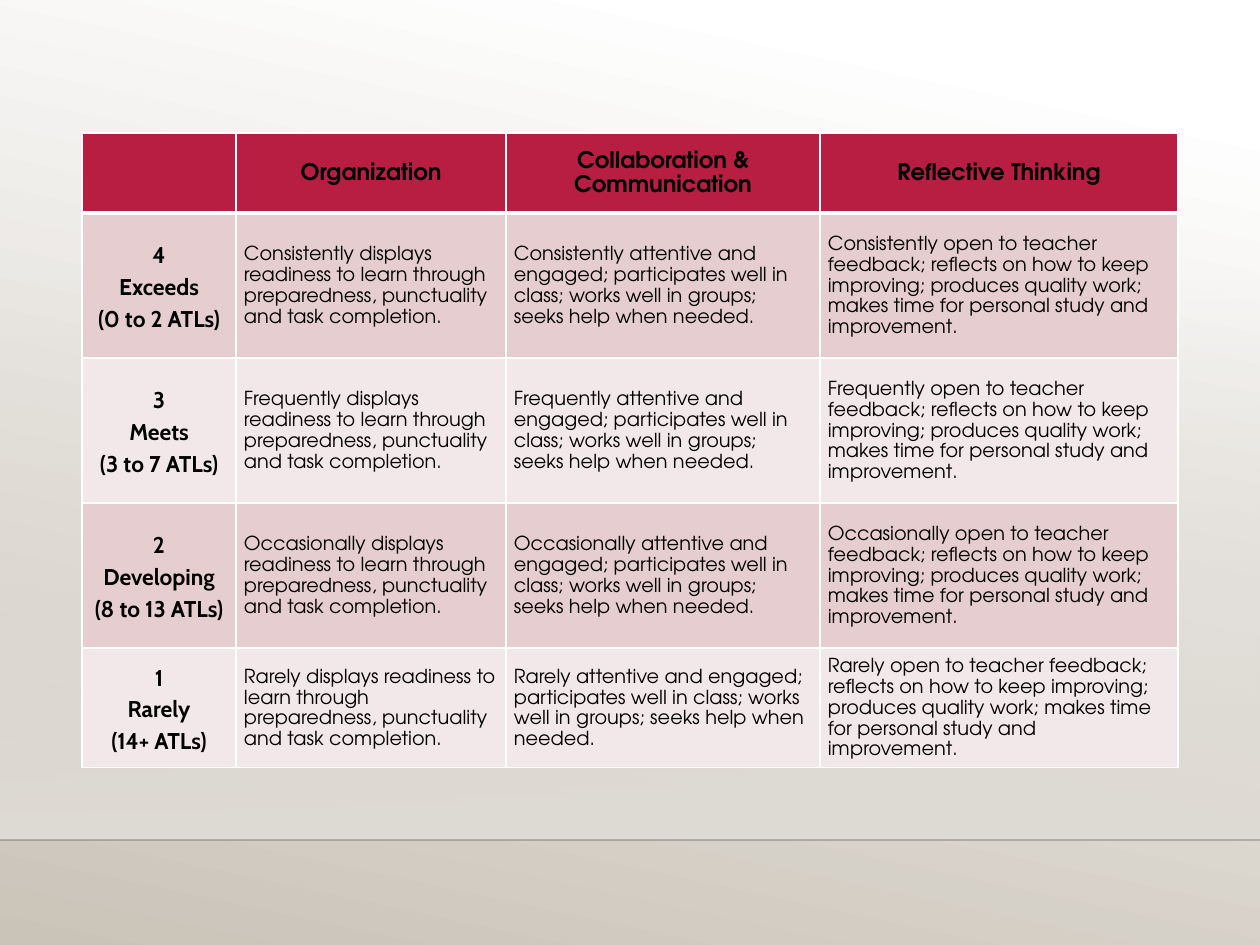
from lxml import etree
from pptx import Presentation
from pptx.dml.color import RGBColor
from pptx.enum.shapes import MSO_CONNECTOR, MSO_SHAPE
from pptx.enum.text import MSO_ANCHOR, PP_ALIGN
from pptx.oxml.ns import qn
from pptx.util import Emu, Pt

STRAIGHT = MSO_CONNECTOR.STRAIGHT
RECTANGLE = MSO_SHAPE.RECTANGLE
MIDDLE = MSO_ANCHOR.MIDDLE
CENTER, LEFT = PP_ALIGN.CENTER, PP_ALIGN.LEFT

PX_PER_INCH = 126
WIDTH, HEIGHT = 1260, 945
COLORS = {
    "white": "FFFFFF", "stone": "CAC3B8", "haze": "DFDBD5", "horizon": "000001",
    "header": "B71E42", "odd": "E6CDCF", "even": "F3E8E9", "text": "000000",
}
TEXT_FONT, LEVEL_FONT = "TeX Gyre Adventor", "Cabin"

COLUMN_WIDTHS = [154, 270, 314, 358]
ROW_HEIGHTS = [80, 145, 145, 145, 119]
CELL_MARGIN = 8
HEADINGS = ["", "Organization", "Collaboration & Communication", "Reflective Thinking"]
LEVELS = [
    ("4", "Exceeds", "(0 to 2 ATLs)", "Consistently"),
    ("3", "Meets", "(3 to 7 ATLs)", "Frequently"),
    ("2", "Developing", "(8 to 13 ATLs)", "Occasionally"),
    ("1", "Rarely", "(14+ ATLs)", "Rarely"),
]
CRITERIA = [
    "displays readiness to learn through preparedness, punctuality and task completion.",
    "attentive and engaged; participates well in class; works well in groups; "
    "seeks help when needed.",
    "open to teacher feedback; reflects on how to keep improving; produces quality work; "
    "makes time for personal study and improvement.",
]


def px(length):
    return Emu(round(length * 914400 / PX_PER_INCH))


def rgb(name):
    return RGBColor.from_string(COLORS[name])


def set_alpha(color_parent, percents):
    """Give each colour under the element its opacity, in order."""
    for color, percent in zip(color_parent.iter(qn("a:srgbClr")), percents):
        etree.SubElement(color, qn("a:alpha")).set("val", str(percent * 1000))


def fill_gradient(fill, stops, clockwise_angle):
    fill.gradient()
    fill.gradient_angle = 360 - clockwise_angle
    for stop, (position, name) in zip(fill.gradient_stops, stops):
        stop.position = position
        stop.color.rgb = rgb(name)


def add_backdrop(slide, left, top, width, height):
    """Gradient background, with a haze that ends at a thin horizon line."""
    fill_gradient(slide.background.fill, [(0.1, "white"), (1, "stone")], 102)

    haze_top, horizon_y = top + 277, top + 840
    haze = slide.shapes.add_shape(
        RECTANGLE, px(left), px(haze_top), px(width), px(horizon_y - haze_top))
    haze.shadow.inherit = False
    haze.line.fill.background()
    fill_gradient(haze.fill, [(0, "haze"), (1, "haze")], 90)
    set_alpha(haze.element.spPr, [0, 100])

    horizon = slide.shapes.add_connector(
        STRAIGHT, px(left), px(horizon_y), px(left + width), px(horizon_y))
    horizon.line.color.rgb = rgb("horizon")
    horizon.line.width = Pt(1)
    set_alpha(horizon.element.spPr, [20])
    etree.SubElement(horizon.element.spPr, qn("a:effectLst"))


def set_borders(cell, top=1, bottom=1):
    properties = cell._tc.get_or_add_tcPr()
    for side, points in (("L", 1), ("R", 1), ("T", top), ("B", bottom)):
        border = etree.SubElement(properties, qn(f"a:ln{side}"), w=str(Pt(points)))
        solid = etree.SubElement(border, qn("a:solidFill"))
        etree.SubElement(solid, qn("a:srgbClr"), val=COLORS["white"])


def write_cell(cell, text, font_name, size, bold, alignment):
    cell.text_frame.text = text
    for paragraph in cell.text_frame.paragraphs:
        paragraph.alignment = alignment
        paragraph.line_spacing = 1.15
        paragraph.font.size = Pt(size)
        for run in paragraph.runs:
            run.font.name = font_name
            run.font.size = Pt(size)
            run.font.bold = bold
            run.font.color.rgb = rgb("text")


def add_rubric(slide, left, top):
    rows = [HEADINGS]
    for grade, label, span, adverb in LEVELS:
        rows.append([f"{grade}\n{label}\n{span}"] + [f"{adverb} {rest}" for rest in CRITERIA])

    rubric = slide.shapes.add_table(
        len(rows), len(HEADINGS), px(left), px(top),
        px(sum(COLUMN_WIDTHS)), px(sum(ROW_HEIGHTS))).table
    for column, width in zip(rubric.columns, COLUMN_WIDTHS):
        column.width = px(width)
    for row, height in zip(rubric.rows, ROW_HEIGHTS):
        row.height = px(height)

    for r, texts in enumerate(rows):
        band = "header" if r == 0 else "odd" if r % 2 else "even"
        for c, text in enumerate(texts):
            cell = rubric.cell(r, c)
            cell.vertical_anchor = MIDDLE
            cell.margin_left = cell.margin_right = px(CELL_MARGIN)
            cell.margin_top = cell.margin_bottom = px(CELL_MARGIN)
            set_borders(cell, top=3 if r == 1 else 1, bottom=3 if r == 0 else 1)
            cell.fill.solid()
            cell.fill.fore_color.rgb = rgb(band)
            if r == 0:
                write_cell(cell, text, TEXT_FONT, 13, True, CENTER)
            elif c == 0:
                write_cell(cell, text, LEVEL_FONT, 13, True, CENTER)
            else:
                write_cell(cell, text, TEXT_FONT, 11, False, LEFT)


def main():
    deck = Presentation()
    deck.slide_width, deck.slide_height = px(WIDTH), px(HEIGHT)
    slide = deck.slides.add_slide(deck.slide_layouts[6])
    add_backdrop(slide, 0, 0, WIDTH, HEIGHT)
    add_rubric(slide, 82, 133)
    deck.save("out.pptx")


if __name__ == "__main__":
    main()
